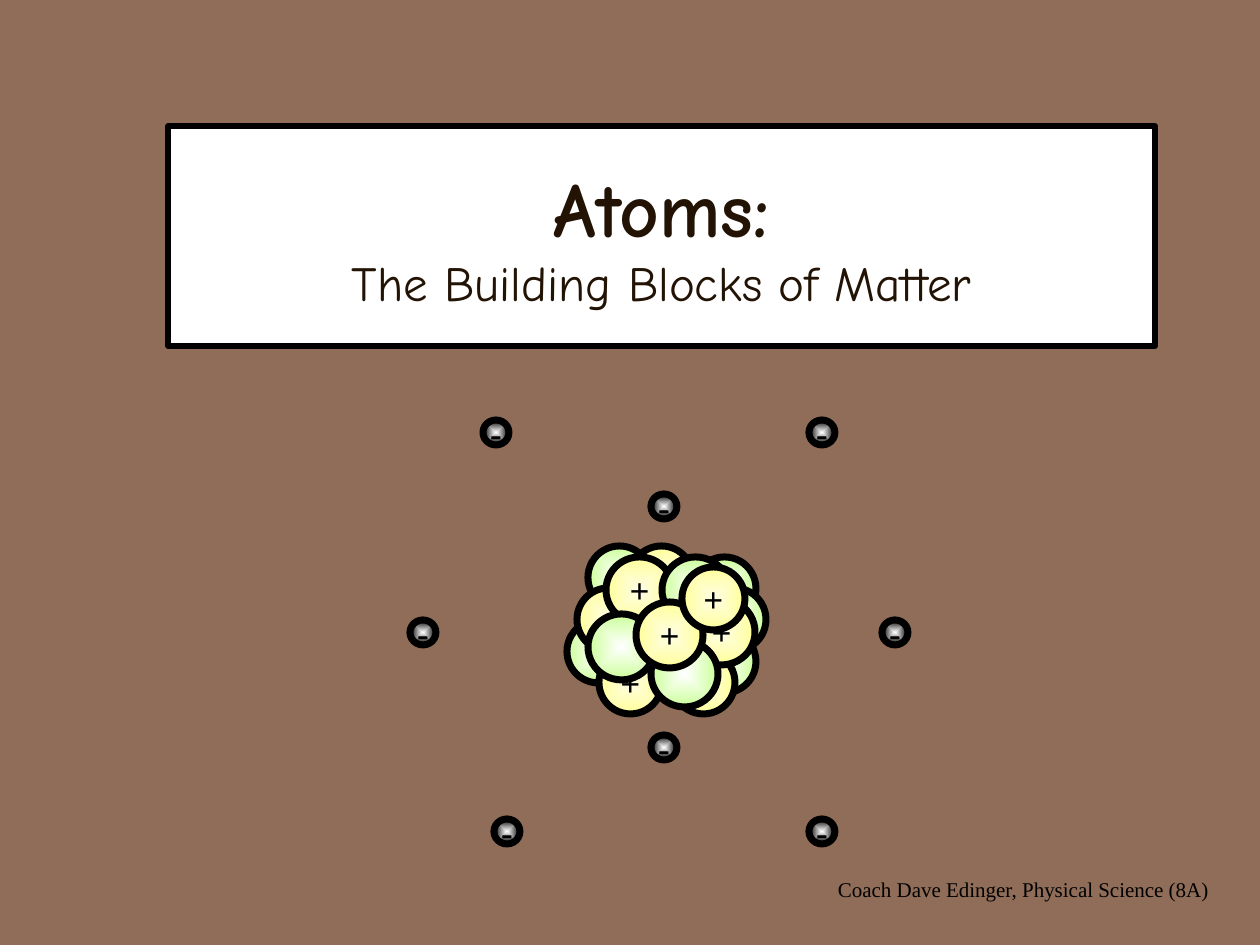
import pptx
import pptx.util
import pptx.dml.color
import pptx.enum.shapes
import pptx.enum.text
import lxml.etree

HUES = {
    "back": "906D58", "white": "FFFFFF", "black": "000000", "title": "221304",
    "cream": "FEFDE3", "yellow": "FFFF99", "green": "CCFF99",
}

# Lines of text: words, size, bold
TITLE = [("Atoms:", 44, True), ("The Building Blocks of Matter", 28, False)]
CREDIT = [("Coach Dave Edinger, Physical Science (8A)", 12, False)]

# Particles: inner hue, outer hue, sign
KINDS = {
    "proton": ("cream", "yellow", "+"),
    "neutron": ("white", "green", ""),
    "electron": ("white", "black", "-"),
}
SMALL, LARGE, TINY = (63, 63), (67, 66), (26, 25)

# Layers from back to front: kind, size, left and top of each
LAYERS = [
    ("neutron", SMALL, [(693, 557), (567, 620), (703, 588), (693, 630), (588, 546)]),
    ("proton", SMALL, [(672, 651), (630, 546), (577, 588), (599, 651)]),
    ("proton", LARGE, [(606, 557)]),
    ("neutron", LARGE, [(662, 557)]),
    ("proton", LARGE, [(688, 599)]),
    ("neutron", LARGE, [(588, 614), (651, 641)]),
    ("proton", LARGE, [(636, 602)]),
    ("electron", TINY, [(651, 494), (651, 735), (809, 420), (882, 620),
                        (809, 819), (494, 819), (483, 420), (410, 620)]),
    ("proton", SMALL, [(682, 567)]),
]

SHAPES = pptx.enum.shapes.MSO_SHAPE
ANCHOR = pptx.enum.text.MSO_ANCHOR


def px(num):
    return pptx.util.Emu(round(num * 914400 / 126))


def hue(name):
    return pptx.dml.color.RGBColor.from_string(HUES[name])


def write(shape, lines, font="Times New Roman", color="black",
          anchor=ANCHOR.MIDDLE, wrap=True, inset=0):
    frame = shape.text_frame
    frame.word_wrap = wrap
    frame.vertical_anchor = anchor
    frame.margin_left = frame.margin_right = frame.margin_top = 0
    frame.margin_bottom = px(inset)
    for num, (words, size, bold) in enumerate(lines):
        para = frame.add_paragraph() if num else frame.paragraphs[0]
        para.alignment = pptx.enum.text.PP_ALIGN.CENTER
        run = para.add_run()
        run.text = words
        run.font.name = font
        run.font.size = pptx.util.Pt(size)
        run.font.bold = bold
        run.font.color.rgb = hue(color)


def draw(slide, form, box, width):
    shape = slide.shapes.add_shape(form, *map(px, box))
    shape.shadow.inherit = False
    shape.line.color.rgb = hue("black")
    shape.line.width = pptx.util.Pt(width)
    return shape


def glow(shape, inner, outer):
    """Fill from the centre outwards."""
    shape.fill.gradient()
    for stop, place, name in zip(shape.fill.gradient_stops, (0, 1), (inner, outer)):
        stop.position = place
        stop.color.rgb = hue(name)
    grad = shape.fill._xPr.find(pptx.oxml.ns.qn("a:gradFill"))
    grad.remove(grad.find(pptx.oxml.ns.qn("a:lin")))
    way = lxml.etree.SubElement(grad, pptx.oxml.ns.qn("a:path"), {"path": "shape"})
    lxml.etree.SubElement(way, pptx.oxml.ns.qn("a:fillToRect"),
                          dict.fromkeys("ltrb", "50000"))


def main():
    deck = pptx.Presentation()
    deck.slide_width, deck.slide_height = px(1260), px(945)
    slide = deck.slides.add_slide(deck.slide_layouts[6])
    slide.background.fill.solid()
    slide.background.fill.fore_color.rgb = hue("back")

    # Title panel
    panel = draw(slide, SHAPES.RECTANGLE, (168, 126, 987, 220), 3)
    panel.fill.solid()
    panel.fill.fore_color.rgb = hue("white")
    write(panel, TITLE, font="Comic Neue", color="title")

    # Nucleus and electrons
    for kind, size, spots in LAYERS:
        inner, outer, sign = KINDS[kind]
        for spot in spots:
            ball = draw(slide, SHAPES.OVAL, spot + size, 4)
            glow(ball, inner, outer)
            if sign:
                write(ball, [(sign, 20, True)], wrap=False)

    # Credit
    note = slide.shapes.add_textbox(*map(px, (824, 848, 399, 63)))
    write(note, CREDIT, anchor=ANCHOR.BOTTOM, inset=9)

    deck.save("out.pptx")


if __name__ == "__main__":
    main()
